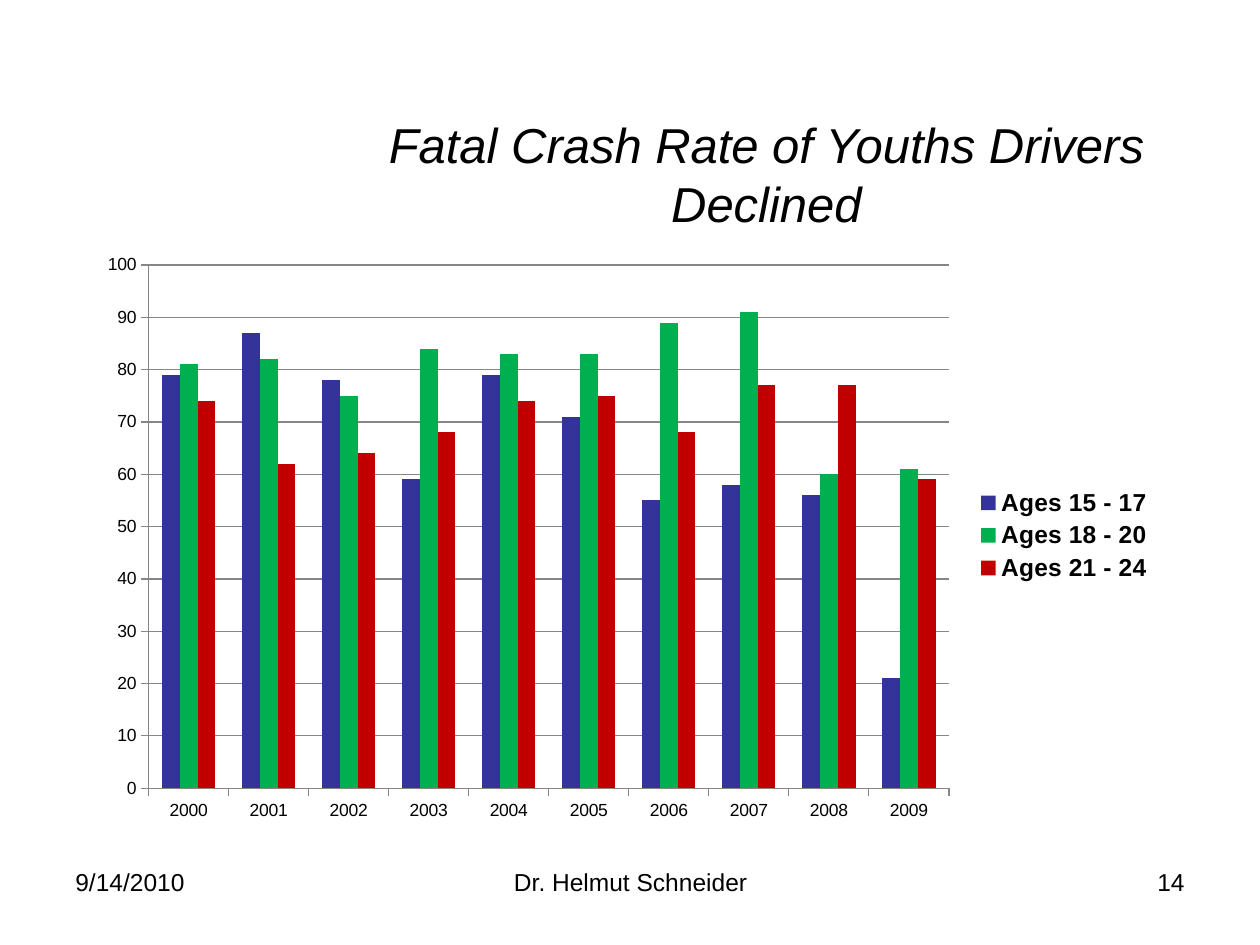
from dataclasses import dataclass

from lxml import etree
from pptx import Presentation
from pptx import util as u
from pptx.chart.data import CategoryChartData
from pptx.dml.color import RGBColor
from pptx.enum import chart as charts, text
from pptx.oxml import ns

TITLE = "Fatal Crash Rate of Youths Drivers Declined"
FOOTERS = [
    ("9/14/2010", 1.27, 5.92, text.PP_ALIGN.LEFT),
    ("Dr. Helmut Schneider", 8.69, 8.05, text.PP_ALIGN.CENTER),
    ("14", 18.21, 5.92, text.PP_ALIGN.RIGHT),
]
YEARS = [str(year) for year in range(2000, 2010)]
CRASH_RATES = [
    ("Ages 15 - 17", "333399", (79, 87, 78, 59, 79, 71, 55, 58, 56, 21)),
    ("Ages 18 - 20", "00B050", (81, 82, 75, 84, 83, 83, 89, 91, 60, 61)),
    ("Ages 21 - 24", "C00000", (74, 62, 64, 68, 74, 75, 68, 77, 77, 59)),
]
PLOT_AREA = {"x": 0.06, "y": 0.04, "w": 0.74, "h": 0.89}


@dataclass(frozen=True)
class Theme:
    font: str = "Arial"
    ink: str = "000000"
    line: str = "868686"
    title: int = 28
    body: int = 14
    axis: int = 10


THEME = Theme()


def style_font(font, size, bold=False, italic=False):
    font.name = THEME.font
    font.size = u.Pt(size)
    font.bold = bold
    font.italic = italic
    font.color.rgb = RGBColor.from_string(THEME.ink)


def add_text(slide, content, box, size, alignment, anchor, italic=False):
    shape = slide.shapes.add_textbox(*(u.Cm(length) for length in box))
    frame = shape.text_frame
    frame.word_wrap = True
    frame.vertical_anchor = anchor
    paragraph = frame.paragraphs[0]
    paragraph.text = content
    paragraph.alignment = alignment
    style_font(paragraph.font, size, italic=italic)


def style_line(line):
    line.color.rgb = RGBColor.from_string(THEME.line)
    line.width = u.Pt(0.75)


def place_plot_area(chart):
    plot_area = chart._chartSpace.find(".//" + ns.qn("c:plotArea"))
    layout = etree.Element(ns.qn("c:layout"))
    manual = etree.SubElement(layout, ns.qn("c:manualLayout"))
    settings = {"layoutTarget": "inner", "xMode": "edge", "yMode": "edge", **PLOT_AREA}
    for name, value in settings.items():
        etree.SubElement(manual, ns.qn("c:" + name)).set("val", str(value))
    plot_area.insert(0, layout)


def add_crash_chart(slide):
    data = CategoryChartData()
    data.categories = YEARS
    for name, _, values in CRASH_RATES:
        data.add_series(name, values)
    box = (u.Cm(length) for length in (1.69, 4.87, 21.8, 11.85))
    chart = slide.shapes.add_chart(
        charts.XL_CHART_TYPE.COLUMN_CLUSTERED, *box, data
    ).chart
    chart.has_title = False
    style_font(chart.font, THEME.axis)

    plot = chart.plots[0]
    plot.gap_width = 150
    plot.overlap = 0
    plot.vary_by_categories = False
    for series, (_, color, _) in zip(plot.series, CRASH_RATES):
        series.format.fill.solid()
        series.format.fill.fore_color.rgb = RGBColor.from_string(color)

    for axis in (chart.category_axis, chart.value_axis):
        axis.major_tick_mark = charts.XL_TICK_MARK.OUTSIDE
        axis.minor_tick_mark = charts.XL_TICK_MARK.NONE
        style_line(axis.format.line)
    value_axis = chart.value_axis
    value_axis.minimum_scale, value_axis.maximum_scale = 0, 100
    value_axis.major_unit = 10
    value_axis.has_major_gridlines = True
    style_line(value_axis.major_gridlines.format.line)

    chart.has_legend = True
    chart.legend.position = charts.XL_LEGEND_POSITION.RIGHT
    chart.legend.include_in_layout = False
    style_font(chart.legend.font, THEME.body, bold=True)
    place_plot_area(chart)


def main():
    presentation = Presentation()
    presentation.slide_width = u.Cm(25.4)
    presentation.slide_height = u.Cm(19.05)
    slide = presentation.slides.add_slide(presentation.slide_layouts[6])
    add_text(slide, TITLE, (6.77, 1.9, 17.36, 3.18), THEME.title,
             text.PP_ALIGN.CENTER, text.MSO_ANCHOR.MIDDLE, italic=True)
    for content, left, width, alignment in FOOTERS:
        add_text(slide, content, (left, 17.35, width, 1.32), THEME.body,
                 alignment, text.MSO_ANCHOR.TOP)
    add_crash_chart(slide)
    presentation.save("out.pptx")


if __name__ == "__main__":
    main()
